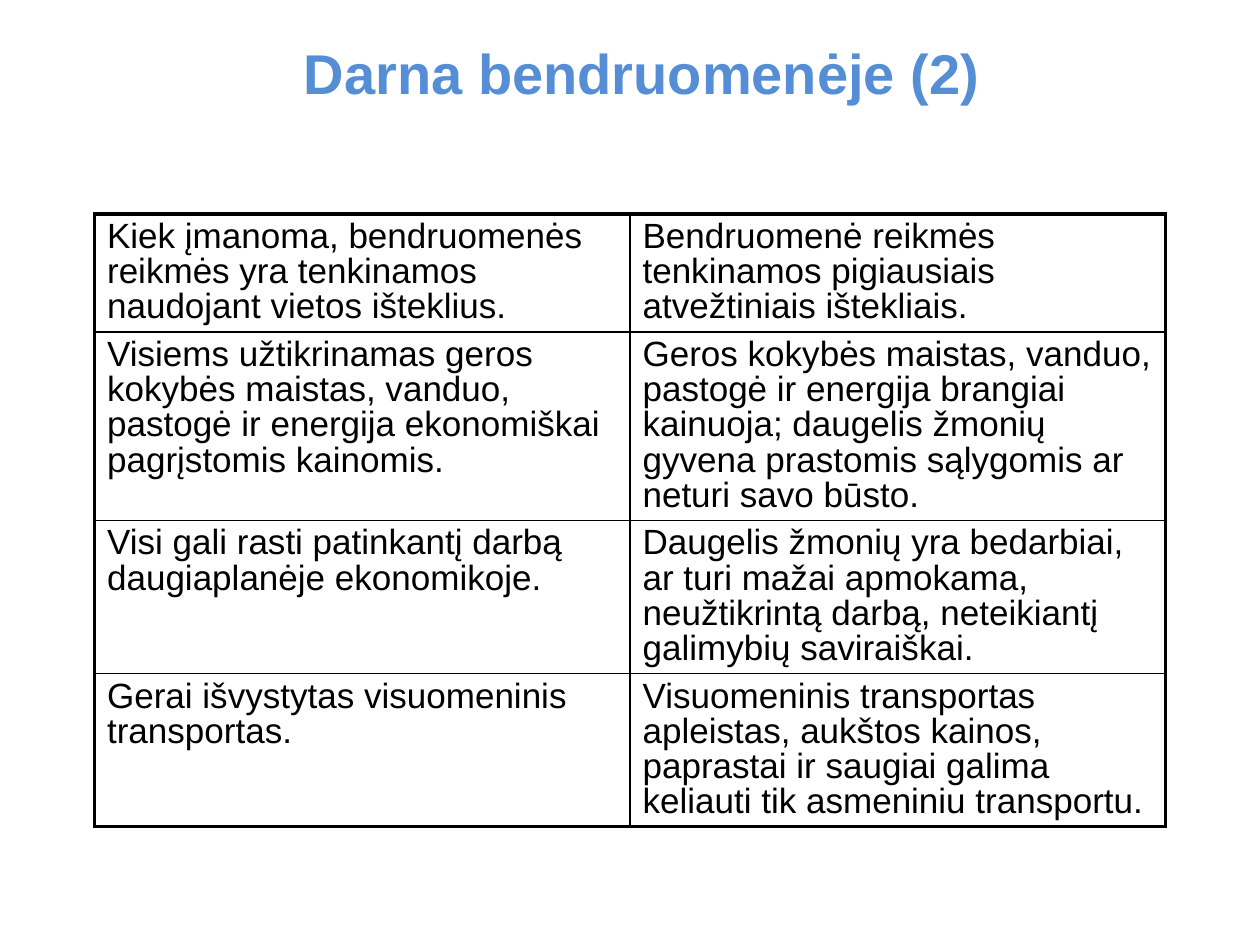
from dataclasses import dataclass

from lxml.etree import SubElement
from pptx import Presentation
from pptx.dml.color import RGBColor
from pptx.enum.text import MSO_ANCHOR, MSO_AUTO_SIZE, PP_ALIGN
from pptx.oxml.ns import qn
from pptx.util import Inches, Pt

FONT = "Arial"
BLACK, BLUE, WHITE = "000000", "558ED5", "FFFFFF"
OUTER_LINE, INNER_LINE = 2.25, 1
COLUMN_WIDTH = 4.25
ROW_HEIGHTS = (0.72, 0.61, 1.21, 1.15)
TABLE_LEFT, TABLE_TOP, TABLE_HEIGHT = 0.75, 1.7, 5.2


@dataclass(frozen=True)
class Contrast:
    harmonious: str
    neglected: str


CONTRASTS = (
    Contrast("Kiek įmanoma, bendruomenės reikmės yra tenkinamos naudojant vietos išteklius.",
             "Bendruomenė reikmės tenkinamos pigiausiais atvežtiniais ištekliais."),
    Contrast("Visiems užtikrinamas geros kokybės maistas, vanduo, pastogė ir energija "
             "ekonomiškai pagrįstomis kainomis.",
             "Geros kokybės maistas, vanduo, pastogė ir energija brangiai kainuoja; "
             "daugelis žmonių gyvena prastomis sąlygomis ar neturi savo būsto."),
    Contrast("Visi gali rasti patinkantį darbą daugiaplanėje ekonomikoje.",
             "Daugelis žmonių yra bedarbiai, ar turi mažai apmokama, neužtikrintą darbą, "
             "neteikiantį galimybių saviraiškai."),
    Contrast("Gerai išvystytas visuomeninis transportas.",
             "Visuomeninis transportas apleistas, aukštos kainos, paprastai ir saugiai "
             "galima keliauti tik asmeniniu transportu."),
)


def color(value: str) -> RGBColor:
    return RGBColor.from_string(value)


def add_span(para, text: str, size: float, tint: str, bold: bool = False) -> None:
    span = para.add_run()
    span.text = text
    span.font.name = FONT
    span.font.size = Pt(size)
    span.font.bold = bold
    span.font.color.rgb = color(tint)


def add_title(page, text: str) -> None:
    box = page.shapes.title
    box.left, box.top, box.width, box.height = map(Inches, (0.51, 0.21, 9.17, 0.72))
    frame = box.text_frame
    frame.word_wrap = True
    frame.auto_size = MSO_AUTO_SIZE.NONE
    frame.vertical_anchor = MSO_ANCHOR.MIDDLE
    para = frame.paragraphs[0]
    para.alignment = PP_ALIGN.CENTER
    add_span(para, text, 32, BLUE, bold=True)


def set_borders(cell, widths: dict[str, float]) -> None:
    properties = cell._tc.get_or_add_tcPr()
    for position, (side, width) in enumerate(widths.items()):
        line = properties.makeelement(qn(f"a:{side}"), {"w": str(Pt(width))})
        fill = SubElement(line, qn("a:solidFill"))
        SubElement(fill, qn("a:srgbClr"), val=BLACK)
        properties.insert(position, line)  # borders come before the cell fill


def fill_cell(cell, text: str) -> None:
    cell.fill.solid()
    cell.fill.fore_color.rgb = color(WHITE)
    cell.vertical_anchor = MSO_ANCHOR.TOP
    cell.margin_left = cell.margin_right = Inches(0.1)
    cell.margin_top = cell.margin_bottom = Inches(0.05)
    para = cell.text_frame.paragraphs[0]
    para.line_spacing = 0.9
    # Space before as a share of the text size
    before = SubElement(para._p.get_or_add_pPr(), qn("a:spcBef"))
    SubElement(before, qn("a:spcPct"), val="20000")
    add_span(para, text, 20, BLACK)


def add_contrasts(page, contrasts: tuple[Contrast, ...]) -> None:
    rows, columns = len(contrasts), 2
    holder = page.shapes.add_table(
        rows, columns, Inches(TABLE_LEFT), Inches(TABLE_TOP),
        Inches(COLUMN_WIDTH * columns), Inches(TABLE_HEIGHT))
    table = holder.table
    table.first_row = table.horz_banding = False
    for row, (contrast, height) in enumerate(zip(contrasts, ROW_HEIGHTS)):
        table.rows[row].height = Inches(height)
        for column, text in enumerate((contrast.harmonious, contrast.neglected)):
            cell = table.cell(row, column)
            fill_cell(cell, text)
            on_edge = {"lnL": column == 0, "lnR": column == columns - 1,
                       "lnT": row == 0, "lnB": row == rows - 1}
            set_borders(cell, {side: OUTER_LINE if edge else INNER_LINE
                               for side, edge in on_edge.items()})
    holder.height = Inches(TABLE_HEIGHT)


def main() -> None:
    deck = Presentation()
    deck.slide_width, deck.slide_height = Inches(10), Inches(7.5)
    page = deck.slides.add_slide(deck.slide_layouts.get_by_name("Title Only"))
    add_title(page, "Darna bendruomenėje (2)")
    add_contrasts(page, CONTRASTS)
    deck.save("out.pptx")


if __name__ == "__main__":
    main()
